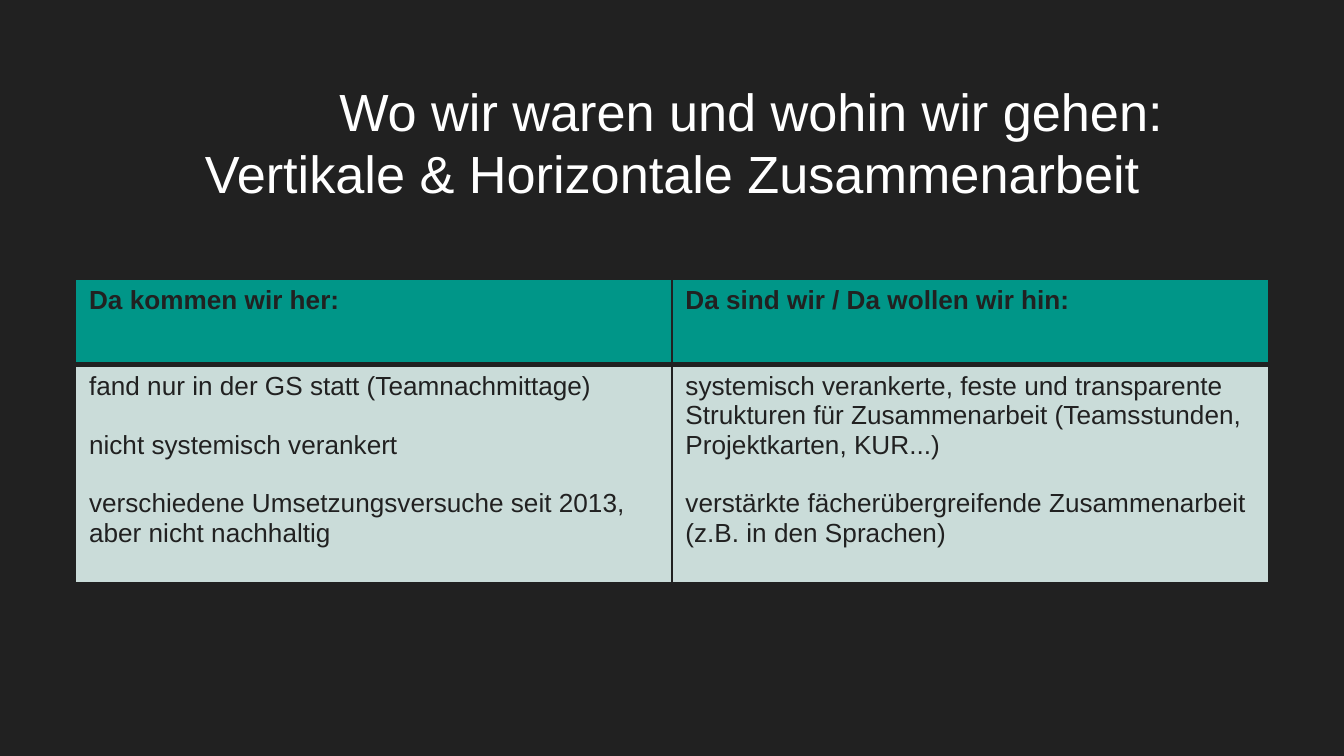
import pptx
import pptx.dml.color
import pptx.enum.text
import pptx.util
from lxml import etree
from pptx.oxml.ns import qn

Pt = pptx.util.Pt
RGBColor = pptx.dml.color.RGBColor

DARK = RGBColor(0x21, 0x21, 0x21)
WHITE = RGBColor(0xFF, 0xFF, 0xFF)
TEAL = RGBColor(0x00, 0x96, 0x88)
PALE = RGBColor(0xCA, 0xDC, 0xD9)

TITLE_LINES = [
    ("Wo wir waren und wohin wir gehen:", Pt(84.5)),
    ("Vertikale & Horizontale Zusammenarbeit", Pt(0)),
]
ROWS = [
    [["Da kommen wir her:"], ["Da sind wir / Da wollen wir hin:"]],
    [
        [
            "fand nur in der GS statt (Teamnachmittage)",
            "nicht systemisch verankert",
            "verschiedene Umsetzungsversuche seit 2013, aber nicht nachhaltig",
        ],
        [
            "systemisch verankerte, feste und transparente Strukturen "
            "für Zusammenarbeit (Teamsstunden, Projektkarten, KUR...)",
            "verstärkte fächerübergreifende Zusammenarbeit (z.B. in den Sprachen)",
        ],
    ],
]


def add_run(paragraph, text, size, color, bold=False):
    run = paragraph.add_run()
    run.text = text
    run.font.name = "Arial"
    run.font.size = Pt(size)
    run.font.bold = bold
    run.font.color.rgb = color


def add_border(cell, side, width):
    properties = cell._tc.get_or_add_tcPr()
    line = etree.SubElement(properties, qn("a:ln" + side), w=str(Pt(width)))
    fill = etree.SubElement(line, qn("a:solidFill"))
    etree.SubElement(fill, qn("a:srgbClr"), val=str(DARK))


# Slide and background
presentation = pptx.Presentation()
presentation.slide_width = Pt(720)
presentation.slide_height = Pt(405)
slide = presentation.slides.add_slide(presentation.slide_layouts[5])
slide.background.fill.solid()
slide.background.fill.fore_color.rgb = DARK

# Title: the first line is shifted right by an indent
title = slide.shapes.title
title.left, title.top, title.width, title.height = Pt(24.5), Pt(35), Pt(671), Pt(89)
frame = title.text_frame
frame.word_wrap = True
frame.auto_size = pptx.enum.text.MSO_AUTO_SIZE.NONE
frame.vertical_anchor = pptx.enum.text.MSO_ANCHOR.TOP
frame.margin_left = frame.margin_right = Pt(7.2)
frame.margin_top = frame.margin_bottom = Pt(7.2)
for index, (text, indent) in enumerate(TITLE_LINES):
    paragraph = frame.add_paragraph() if index else frame.paragraphs[0]
    paragraph.alignment = pptx.enum.text.PP_ALIGN.CENTER
    paragraph._p.get_or_add_pPr().set("marL", str(indent))
    add_run(paragraph, text, 28, WHITE)

# Comparison table
table = slide.shapes.add_table(2, 2, Pt(40.5), Pt(149.5), Pt(639), Pt(163)).table
table.horz_banding = False
for column in table.columns:
    column.width = Pt(319.5)
table.rows[0].height = Pt(46)
table.rows[1].height = Pt(117)

for row_index, row in enumerate(ROWS):
    is_header = row_index == 0
    for column_index, texts in enumerate(row):
        cell = table.cell(row_index, column_index)
        cell.margin_left = cell.margin_right = Pt(7.2)
        cell.margin_top = cell.margin_bottom = Pt(3.6)

        # A thicker rule separates the header from the body
        add_border(cell, "L", 1)
        add_border(cell, "R", 1)
        add_border(cell, "T", 1 if is_header else 3)
        add_border(cell, "B", 3 if is_header else 1)
        cell.fill.solid()
        cell.fill.fore_color.rgb = TEAL if is_header else PALE

        for index, text in enumerate(texts):
            paragraph = cell.text_frame.add_paragraph() if index else cell.text_frame.paragraphs[0]
            paragraph.space_before = Pt(15.7 if index else 0)
            add_run(paragraph, text, 14, DARK, bold=is_header)

presentation.save("out.pptx")
